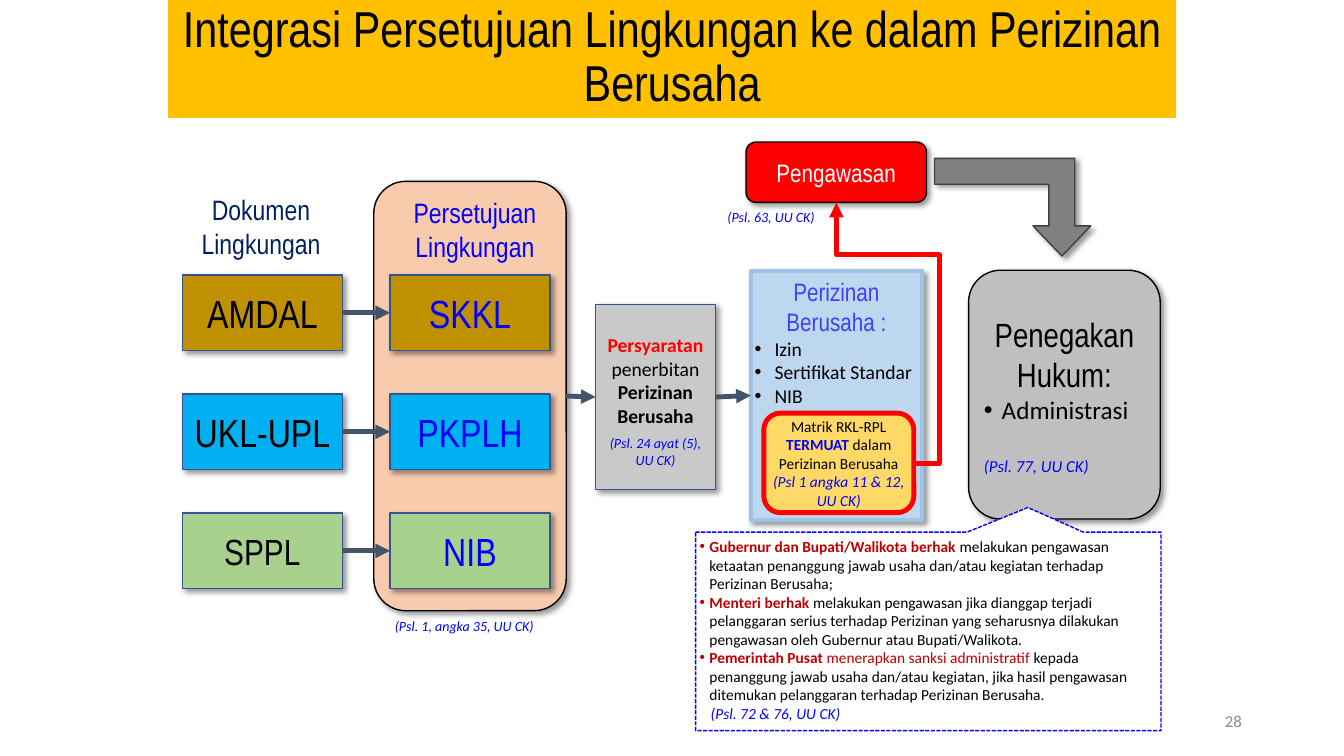
from pptx import Presentation
from pptx.dml.color import RGBColor
from pptx.enum.dml import MSO_LINE
from pptx.enum.shapes import MSO_CONNECTOR, MSO_SHAPE
from pptx.enum.text import MSO_ANCHOR, MSO_AUTO_SIZE, PP_ALIGN
from pptx.oxml.ns import qn
from pptx.util import Cm, Pt
from lxml import etree

RECT, ROUND = MSO_SHAPE.RECTANGLE, MSO_SHAPE.ROUNDED_RECTANGLE
BENT, CALLOUT = MSO_SHAPE.BENT_UP_ARROW, MSO_SHAPE.RECTANGULAR_CALLOUT
STRAIGHT, ELBOW = MSO_CONNECTOR.STRAIGHT, MSO_CONNECTOR.ELBOW
TOP, MIDDLE, BOTTOM = MSO_ANCHOR.TOP, MSO_ANCHOR.MIDDLE, MSO_ANCHOR.BOTTOM
LEFT, CENTER, RIGHT = PP_ALIGN.LEFT, PP_ALIGN.CENTER, PP_ALIGN.RIGHT
DASH, NO_FIT = MSO_LINE.SQUARE_DOT, MSO_AUTO_SIZE.NONE
NARROW, BODY = "Arial Narrow", "Calibri"
BLACK, WHITE, BLUE, RED = "000000", "FFFFFF", "0000FF", "FF0000"
DARK_RED, NAVY, SLATE, EDGE = "C00000", "002060", "44546A", "325491"


def rgb(value):
    return RGBColor.from_string(value)


def child(parent, tag, **attrs):
    return etree.SubElement(parent, qn(tag), {k: str(v) for k, v in attrs.items()})


def run(text, size, color=BLACK, font=BODY, bold=False, italic=False):
    return text, size, color, font, bold, italic


def para(*runs, align=LEFT, indent=0, hang=0, before=0):
    return runs, align, indent, hang, before


def heading(text, size, color=BLACK, indent=0):
    return para(run(text, size, color, NARROW), align=CENTER, indent=indent)


def cite(text, size=10, **options):
    return para(run(text, size, BLUE, italic=True), **options)


class Slide:
    def __init__(self, prs):
        self.s = prs.slides.add_slide(prs.slide_layouts[5])

    def fill_text(self, sp, paras, anchor=TOP, pad=0.25, top=0.13, wrap=True):
        tf = sp.text_frame
        tf.auto_size, tf.word_wrap, tf.vertical_anchor = NO_FIT, wrap, anchor
        tf.margin_left = tf.margin_right = Cm(pad)
        tf.margin_top, tf.margin_bottom = Cm(top), Cm(0.13)
        for i, (runs, align, indent, hang, before) in enumerate(paras):
            p = tf.add_paragraph() if i else tf.paragraphs[0]
            p.alignment, p.space_before = align, Pt(before)
            pPr = p._p.get_or_add_pPr()
            pPr.set("marL", str(Cm(indent)))
            pPr.set("indent", str(-Cm(hang)))
            if hang:
                child(pPr, "a:buFont", typeface="Arial")
                child(pPr, "a:buChar", char="•")
            for text, size, color, font, bold, italic in runs:
                r = p.add_run()
                r.text = text
                r.font.size, r.font.name = Pt(size), font
                r.font.bold, r.font.italic = bold, italic
                r.font.color.rgb = rgb(color)

    def title(self, box, text, fill):
        sp = self.s.shapes.title
        sp.left, sp.top, sp.width, sp.height = map(Cm, box)
        sp.fill.solid()
        sp.fill.fore_color.rgb = rgb(fill)
        self.fill_text(sp, [heading(text, 36)], MIDDLE)
        sp.text_frame.paragraphs[0].line_spacing = 0.9

    def shape(self, kind, box, fill, line, width=1, paras=(), shadow=True, adj=(), **options):
        sp = self.s.shapes.add_shape(kind, *map(Cm, box))
        for i, value in enumerate(adj):
            sp.adjustments[i] = value
        sp.fill.solid()
        sp.fill.fore_color.rgb = rgb(fill)
        sp.line.color.rgb = rgb(line)
        sp.line.width = Pt(width)
        sp.shadow.inherit = False
        if shadow:
            effects = sp._element.spPr.find(qn("a:effectLst"))
            outer = child(effects, "a:outerShdw", blurRad=Pt(4), dist=Pt(3),
                          dir=2700000, algn="tl", rotWithShape=0)
            child(child(outer, "a:srgbClr", val=BLACK), "a:alpha", val=40000)
        self.fill_text(sp, paras, **options)
        return sp

    def text(self, box, paras, **options):
        self.fill_text(self.s.shapes.add_textbox(*map(Cm, box)), paras, **options)

    def line(self, kind, color, ends=(0, 0, 0, 0)):
        c = self.s.shapes.add_connector(kind, *map(Cm, ends))
        c.line.color.rgb = rgb(color)
        c.line.width = Pt(3.5)
        child(c._element.spPr.find(qn("a:ln")), "a:tailEnd", type="triangle")
        child(c._element.spPr, "a:effectLst")
        return c

    def arrow(self, start, end):
        c = self.line(STRAIGHT, SLATE)
        c.begin_connect(start, 3)
        c.end_connect(end, 1)

    def elbow(self, ends, color, adj):
        c = self.line(ELBOW, color, ends)
        geom = c._element.spPr.find(qn("a:prstGeom"))
        geom.set("prst", "bentConnector4")
        guides = geom.find(qn("a:avLst"))
        if guides is None:
            guides = child(geom, "a:avLst")
        for i, value in enumerate(adj, 1):
            child(guides, "a:gd", name=f"adj{i}", fmla=f"val {round(value * 100000)}")


def main():
    prs = Presentation()
    prs.slide_width, prs.slide_height = Cm(33.87), Cm(19.05)
    s = Slide(prs)
    s.title((4.24, -0.05, 25.4, 3.02),
            "Integrasi Persetujuan Lingkungan ke dalam Perizinan Berusaha", "FFC000")

    permit = s.shape(RECT, (18.92, 6.83, 4.32, 6.27), "BDD7EE", "9DC3E6", 3, [
        heading("Perizinan Berusaha :", 18, "3F3FFF"),
        *(para(run(item, 14), indent=0.5, hang=0.5)
          for item in ("Izin", "Sertifikat Standar", "NIB"))], pad=0.1)
    s.shape(ROUND, (18.8, 3.58, 4.55, 1.52), RED, BLACK,
            paras=[heading("Pengawasan", 18, WHITE)], anchor=MIDDLE, pad=0)
    s.shape(ROUND, (24.41, 6.81, 4.83, 6.27), "BFBFBF", BLACK, paras=[
        heading("Penegakan Hukum:", 24),
        para(run("Administrasi", 18), indent=0.5, hang=0.45),
        cite("(Psl. 77, UU CK)", 12, indent=0.05, before=22)], anchor=MIDDLE, pad=0.1)

    turn = s.shape(BENT, (23.55, 3.99, 3.94, 2.46), "808080", "404040",
                   adj=(0.265, 0.296, 0.308))
    turn.rotation = 180
    turn._element.spPr.find(qn("a:xfrm")).set("flipH", "1")

    requirement = s.shape(RECT, (15.01, 7.67, 3.02, 4.67), "C9C9C9", EDGE, paras=[
        para(run("Persyaratan ", 14, RED, bold=True), run("penerbitan ", 14),
             run("Perizinan Berusaha", 14, bold=True), align=CENTER)], pad=0.1, top=0.73)

    duties = [
        (("Gubernur dan Bupati/Walikota berhak ", DARK_RED, True),
         ("melakukan pengawasan ketaatan penanggung jawab usaha dan/atau kegiatan "
          "terhadap Perizinan Berusaha;", BLACK, False)),
        (("Menteri berhak ", DARK_RED, True),
         ("melakukan pengawasan jika dianggap terjadi pelanggaran serius terhadap Perizinan "
          "yang seharusnya dilakukan pengawasan oleh Gubernur atau Bupati/Walikota.",
          BLACK, False)),
        (("Pemerintah Pusat ", DARK_RED, True),
         ("menerapkan sanksi administratif ", DARK_RED, False),
         ("kepada penanggung jawab usaha dan/atau kegiatan, jika hasil pengawasan ditemukan "
          "pelanggaran terhadap Perizinan Berusaha.", BLACK, False)),
    ]
    callout = s.shape(CALLOUT, (17.53, 13.41, 11.73, 5), WHITE, BLUE, paras=[
        *(para(*(run(text, 11, color, bold=bold) for text, color, bold in duty),
               indent=0.25, hang=0.25) for duty in duties),
        cite("(Psl. 72 & 76, UU CK)", 11, indent=0.28)],
        shadow=False, adj=(0.214, -0.624), pad=0.1)
    callout.line.dash_style = DASH

    approval = s.shape(ROUND, (9.42, 4.57, 4.85, 10.82), "F8CBAD", BLACK, paras=[
        heading("Persetujuan Lingkungan", 20, BLUE, 0.25)], pad=0)
    s.text((4.45, 4.72, 4.01, 1.96), [heading("Dokumen Lingkungan", 20, NAVY, 0.25)],
           anchor=BOTTOM, pad=0.1)

    rows = [("AMDAL", 28, "SKKL", "BF9000"),
            ("UKL-UPL", 28, "PKPLH", "00B0F0"),
            ("SPPL", 26, "NIB", "A9D18E")]
    for i, (document, size, result, fill) in enumerate(rows):
        top = 6.93 + 3 * i
        source, target = (
            s.shape(RECT, (left, top, 4.03, 1.9), fill, EDGE, paras=[label], anchor=MIDDLE)
            for left, label in ((4.6, heading(document, size)),
                                (9.83, heading(result, 28, BLUE))))
        s.arrow(source, target)
    s.arrow(approval, requirement)
    s.arrow(requirement, permit)

    s.shape(ROUND, (19.25, 10.41, 3.78, 2.51), "FFD966", RED, 3.5, [
        para(run("Matrik RKL-RPL ", 11), run("TERMUAT ", 11, BLUE, bold=True),
             run("dalam Perizinan Berusaha", 11), align=CENTER),
        cite("(Psl 1 angka 11 & 12, UU CK)", 11, align=CENTER)],
        shadow=False, anchor=MIDDLE, pad=0)
    s.elbow((23.04, 11.68, 21.08, 5.11), RED, (-0.325, 0.8))

    s.text((15.01, 10.82, 3.02, 1.12), [cite("(Psl. 24 ayat (5),", align=CENTER),
                                        cite("UU CK)", align=CENTER)], wrap=False)
    s.text((9.7, 15.44, 4.45, 0.69), [cite("(Psl. 1, angka 35, UU CK)")])
    s.text((18.08, 5.13, 4.45, 0.69), [cite("(Psl. 63, UU CK)")])
    s.text((23.93, 17.65, 7.62, 1.02), [para(run("28", 12, "8C8C8C"), align=RIGHT)],
           anchor=MIDDLE)
    prs.save("out.pptx")


if __name__ == "__main__":
    main()
